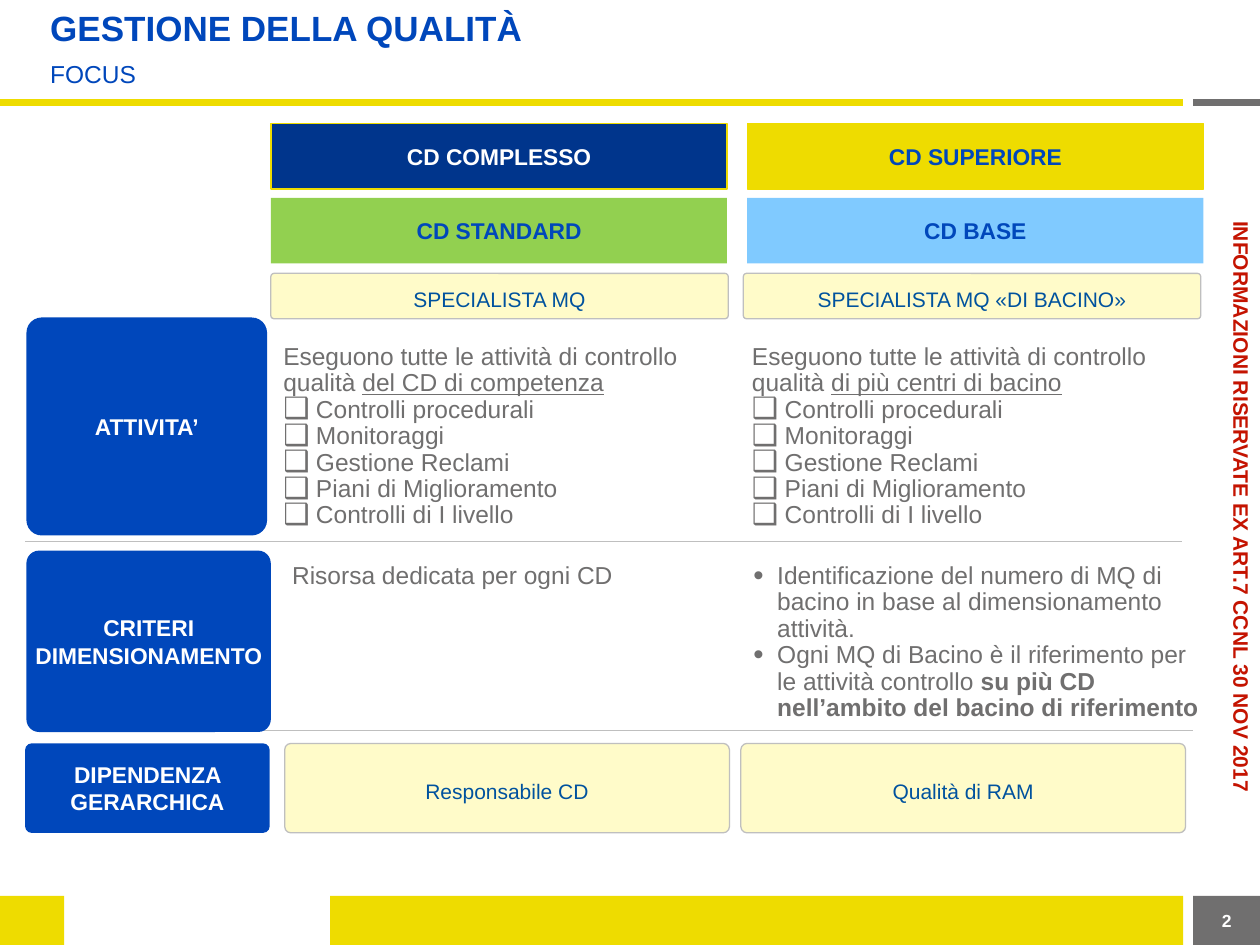
from dataclasses import dataclass
from lxml import etree
from pptx import Presentation, util as u
from pptx.dml.color import RGBColor
from pptx.enum import shapes, text
from pptx.oxml.ns import qn


@dataclass(frozen=True)
class Theme:
    font: str = "Arial"
    blue: str = "0047BB"
    navy: str = "00358C"
    yellow: str = "EEDC00"
    green: str = "92D050"
    sky: str = "80CAFF"
    cream: str = "FFFBC9"
    ink: str = "00529E"
    gray: str = "706F6F"
    rule: str = "BFBFBF"
    red: str = "C41300"
    white: str = "FFFFFF"
    title: int = 20
    body: int = 14
    label: int = 13
    small: int = 12
    page: int = 10


T = Theme()
CELL = u.Inches(0.1)  # the slide is a grid of 100 columns by 75 rows
MID, TOP = text.MSO_ANCHOR.MIDDLE, text.MSO_ANCHOR.TOP
CENTER, LEFT = text.PP_ALIGN.CENTER, text.PP_ALIGN.LEFT
RECT, ROUND = shapes.MSO_SHAPE.RECTANGLE, shapes.MSO_SHAPE.ROUNDED_RECTANGLE


def cells(*values):
    return [round(v * CELL) for v in values]


def set_all(obj, **values):
    for name, value in values.items():
        setattr(obj, name, value)


def bullet(p, char, indent):
    pPr = p._p.get_or_add_pPr()
    pPr.set("marL", str(u.Inches(indent)))
    pPr.set("indent", str(-u.Inches(indent)))
    color = etree.SubElement(pPr, qn("a:buClr"))
    etree.SubElement(color, qn("a:srgbClr"), val=T.gray)
    etree.SubElement(pPr, qn("a:buSzPct"), val="120000")
    etree.SubElement(pPr, qn("a:buFont"), typeface=T.font)
    etree.SubElement(pPr, qn("a:buChar"), char=char)


def write(sp, paragraphs, size, color, bold=False, anchor=MID, align=CENTER,
          spacing=None, inset=(0.1, 0.05, 0.1, 0.05), wrap=True):
    """Each paragraph is (bullet or None, indent, [(words, run format), ...])."""
    tf = sp.text_frame
    left, top, right, bottom = (u.Inches(v) for v in inset)
    set_all(tf, word_wrap=wrap, vertical_anchor=anchor, margin_left=left,
            margin_top=top, margin_right=right, margin_bottom=bottom)
    for i, (char, indent, runs) in enumerate(paragraphs):
        p = tf.add_paragraph() if i else tf.paragraphs[0]
        set_all(p, alignment=align, line_spacing=spacing)
        if char:
            bullet(p, char, indent)
        for words, form in runs:
            r = p.add_run()
            r.text = words
            set_all(r.font, **{"name": T.font, "size": u.Pt(size), "bold": bold, **form})
            r.font.color.rgb = RGBColor.from_string(color)


def plain(words):
    return [(None, 0, [(words, {})])]


def block(s, box, fill, kind=RECT, line=None):
    sp = s.shapes.add_shape(kind, *cells(*box))
    sp.shadow.inherit = False
    sp.fill.solid()
    sp.fill.fore_color.rgb = RGBColor.from_string(fill)
    if kind == ROUND:
        sp.adjustments[0] = 0.07
    if line:
        sp.line.color.rgb = RGBColor.from_string(line)
        sp.line.width = u.Pt(0.75)
    else:
        sp.line.fill.background()
    return sp


def rule(s, x, y, w, color, width):
    ln = s.shapes.add_connector(shapes.MSO_CONNECTOR.STRAIGHT, *cells(x, y, x + w, y))
    ln.line.color.rgb = RGBColor.from_string(color)
    ln.line.width = u.Pt(width)
    etree.SubElement(ln._element.spPr, qn("a:effectLst"))


def copy_text(s, box, paragraphs, size=T.body, color=T.gray, **form):
    sp = s.shapes.add_textbox(*cells(*box))
    write(sp, paragraphs, size, color, **{"anchor": TOP, "align": LEFT, "spacing": 0.9, **form})
    return sp


def row_label(s, box, words, inset=(0.1, 0.05, 0.1, 0.05)):
    write(block(s, box, T.blue, ROUND), plain(words), T.label, T.white, True, inset=inset)


def card(s, box, words):
    write(block(s, box, T.cream, ROUND, T.rule), plain(words), T.small, T.ink,
          inset=(0, 0.05, 0, 0))


def header(s, x, y, w, h):
    copy_text(s, (x + 3, y + 0.4, 94, 3.9), plain("GESTIONE DELLA QUALITÀ"),
              T.title, T.blue, bold=True)
    copy_text(s, (x + 3, y + 3.9, 94, 4.2), plain("FOCUS"), color=T.blue, anchor=MID)
    rule(s, x, y + h, 93.9, T.yellow, 4)
    rule(s, x + 94.7, y + h, w - 94.7, T.gray, 4)


def footer(s, x, y, w, h):
    block(s, (x, y, 5.1, h), T.yellow)
    block(s, (x + 26.2, y, 67.7, h), T.yellow)
    number = block(s, (x + 94.7, y, w - 94.7, h), T.gray)
    write(number, plain("2"), T.page, T.white, True)


def side_note(s, x, y, w, h):
    # Laid out horizontally around the box centre, then turned
    box = (x + (w - h) / 2, y + (h - w) / 2, h, w)
    sp = copy_text(s, box, plain("INFORMAZIONI RISERVATE EX ART.7 CCNL 30 NOV 2017"),
                   T.small, T.red, bold=True, align=CENTER, spacing=None,
                   inset=(0, 0, 0, 0), wrap=False)
    sp.rotation = 90


def column_heads(s, x, y, w, h):
    heads = [[("CD COMPLESSO", T.navy, T.white, T.yellow),
              ("CD SUPERIORE", T.yellow, T.blue, T.yellow)],
             [("CD STANDARD", T.green, T.blue, None),
              ("CD BASE", T.sky, T.blue, None)]]
    for i, line in enumerate(heads):
        for j, (words, fill, color, edge) in enumerate(line):
            sp = block(s, (x + 37.8 * j, y + 5.9 * i, 36.2, 5.2), fill, line=edge)
            write(sp, plain(words), T.label, color, True)
    for j, words in enumerate(("SPECIALISTA MQ", "SPECIALISTA MQ «DI BACINO»")):
        card(s, (x + 37.5 * j, y + h - 3.6, 36.3, 3.6), words)


def activities(s, x, y, w, h):
    row_label(s, (x, y, 19.1, h), "ATTIVITA’")
    tasks = ("Controlli procedurali", "Monitoraggi", "Gestione Reclami",
             "Piani di Miglioramento", "Controlli di I livello")
    for j, scope in enumerate(("del CD di competenza", "di più centri di bacino")):
        intro = (None, 0, [("Eseguono tutte le attività di controllo qualità ", {}),
                           (scope, {"underline": True})])
        items = [("❑", 0.26, [(task, {})]) for task in tasks]
        copy_text(s, (x + 19.4 + 37.2 * j, y + 1.6, 36.3, 15.5), [intro] + items)
    rule(s, x - 0.1, y + h + 0.5, 91.8, T.rule, 0.5)


def sizing(s, x, y, w, h):
    rule(s, x + 0.8, y + h - 0.1, 91.8, T.rule, 0.5)
    row_label(s, (x, y, 19.4, h), "CRITERI DIMENSIONAMENTO", (0.02, 0.05, 0.02, 0.05))
    copy_text(s, (x + 20.1, y + 0.5, 36.3, 8.2), plain("Risorsa dedicata per ogni CD"))
    copy_text(s, (x + 56.7, y + 0.5, 37.8, 13), [
        ("•", 0.19, [("Identificazione del numero di MQ di bacino in base al "
                      "dimensionamento attività.", {})]),
        ("•", 0.19, [("Ogni MQ di Bacino è il riferimento per le attività controllo ", {}),
                     ("su più CD nell’ambito del bacino di riferimento", {"bold": True})])])


def reporting(s, x, y, w, h):
    row_label(s, (x, y, 19.4, h), "DIPENDENZA GERARCHICA")
    for j, words in enumerate(("Responsabile CD", "Qualità di RAM")):
        card(s, (x + 20.6 + 36.2 * j, y, 35.3, h), words)


def main():
    prs = Presentation()
    prs.slide_width, prs.slide_height = cells(100, 75)
    s = prs.slides.add_slide(prs.slide_layouts[6])
    header(s, 0, 0, 100, 8.1)
    footer(s, 0, 71.1, 100, 3.9)
    side_note(s, 97.55, 17.45, 2, 45.5)
    column_heads(s, 21.5, 9.8, 74, 15.5)
    activities(s, 2.1, 25.2, 94, 17.3)
    sizing(s, 2.1, 43.7, 94, 14.4)
    reporting(s, 2, 59, 92, 7.1)
    prs.save("out.pptx")


if __name__ == "__main__":
    main()
